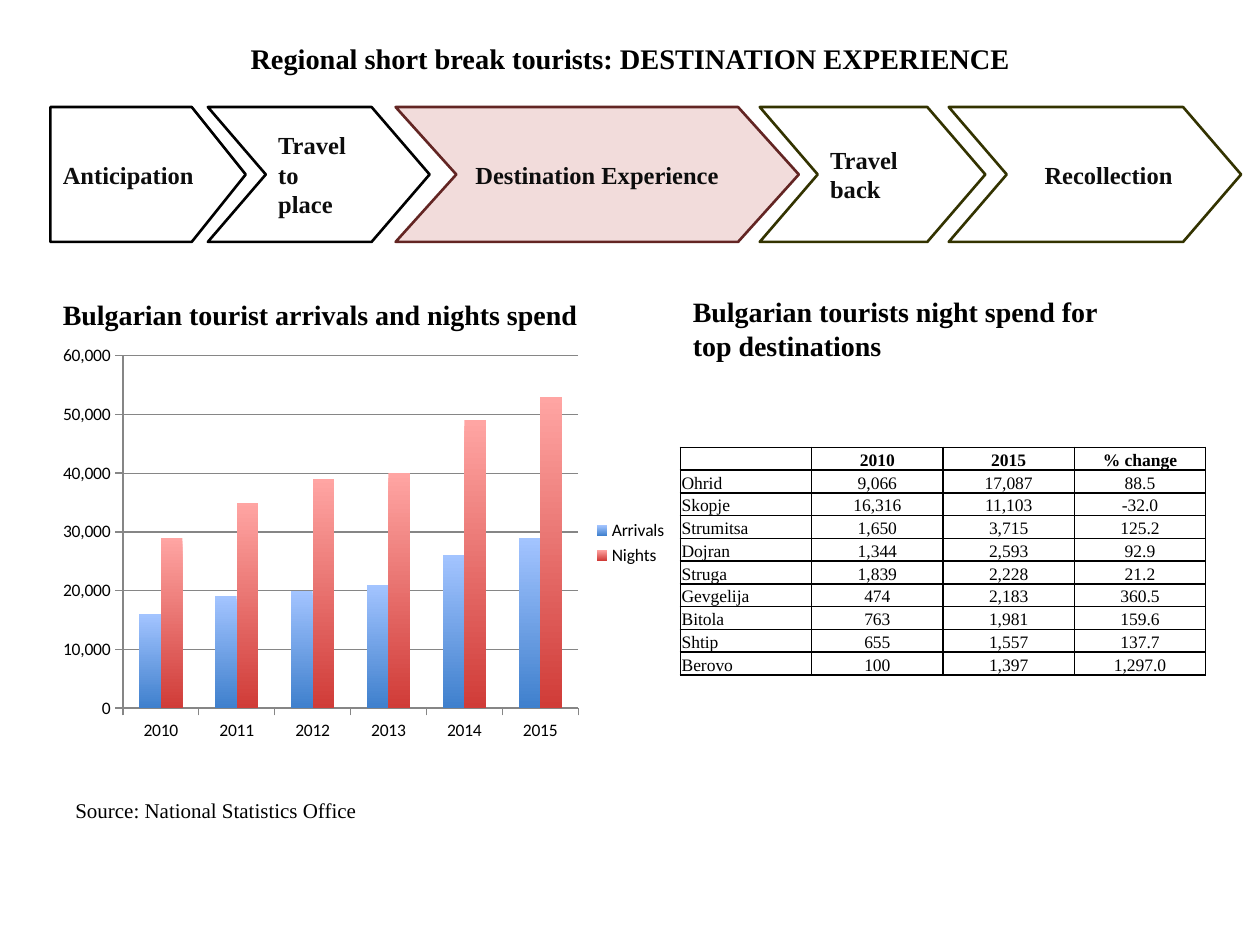
from dataclasses import dataclass

from lxml.etree import SubElement
from pptx import Presentation
from pptx.chart.data import CategoryChartData
from pptx.dml.color import RGBColor
from pptx.enum.chart import XL_CHART_TYPE, XL_LEGEND_POSITION, XL_TICK_MARK
from pptx.enum.shapes import MSO_SHAPE
from pptx.enum.text import MSO_ANCHOR, MSO_AUTO_SIZE, PP_ALIGN
from pptx.oxml.ns import qn
from pptx.util import Inches, Pt


@dataclass(frozen=True)
class Theme:
    serif: str = "Times New Roman"
    sans: str = "Calibri"
    title: float = 16.2
    heading: float = 16
    step: float = 14
    source: float = 12
    small: float = 10
    black: str = "000000"
    ink: str = "0D0D0D"
    white: str = "FFFFFF"
    olive: str = "333300"
    maroon: str = "632523"
    pink: str = "F2DCDB"
    grid: str = "868686"
    bars: tuple = (("A3C4FF", "3F80CD"), ("FFA5A3", "D03C38"))


THEME = Theme()

# left, width, point ratio, preset, text, fill, line, frame format, alignment
STEPS = [
    (0.4, 1.55, 0.4, MSO_SHAPE.PENTAGON, "Anticipation", THEME.white, THEME.black, {}, PP_ALIGN.LEFT),
    (1.65, 1.76, 0.43, MSO_SHAPE.CHEVRON, "Travel to place", THEME.white, THEME.black, {}, PP_ALIGN.LEFT),
    (3.14, 3.2, 0.45, MSO_SHAPE.CHEVRON, "Destination Experience", THEME.pink, THEME.maroon, {},
     PP_ALIGN.CENTER),
    (6.03, 1.79, 0.43, MSO_SHAPE.CHEVRON, "Travel back", THEME.white, THEME.olive, {}, PP_ALIGN.LEFT),
    (7.53, 2.32, 0.43, MSO_SHAPE.CHEVRON, "Recollection", THEME.white, THEME.olive,
     {"margin_left": Inches(0.3), "margin_right": 0}, PP_ALIGN.LEFT),
]

YEARS = ["2010", "2011", "2012", "2013", "2014", "2015"]
SERIES = {
    "Arrivals": [16000, 19000, 20000, 21000, 26000, 29000],
    "Nights": [29000, 35000, 39000, 40000, 49000, 53000],
}

NIGHTS = [
    ("", "2010", "2015", "% change"),
    ("Ohrid", "9,066", "17,087", "88.5"),
    ("Skopje", "16,316", "11,103", "-32.0"),
    ("Strumitsa", "1,650", "3,715", "125.2"),
    ("Dojran", "1,344", "2,593", "92.9"),
    ("Struga", "1,839", "2,228", "21.2"),
    ("Gevgelija", "474", "2,183", "360.5"),
    ("Bitola", "763", "1,981", "159.6"),
    ("Shtip", "655", "1,557", "137.7"),
    ("Berovo", "100", "1,397", "1,297.0"),
]


def apply(obj, **values):
    for name, value in values.items():
        setattr(obj, name, value)


def box(left, top, width, height):
    return [Inches(v) for v in (left, top, width, height)]


def add_borders(cell, color, width=1):
    tcPr = cell._tc.get_or_add_tcPr()
    for i, side in enumerate(("lnL", "lnR", "lnT", "lnB")):
        ln = SubElement(tcPr, qn(f"a:{side}"), w=str(Pt(width)))
        SubElement(SubElement(ln, qn("a:solidFill")), qn("a:srgbClr"), val=color)
        # Borders must come before the cell fill
        tcPr.insert(i, ln)


class SlideBuilder:
    def __init__(self, prs, theme):
        self.theme = theme
        self.slide = prs.slides.add_slide(prs.slide_layouts[5])
        self.shapes = self.slide.shapes

    def set_text(self, tf, text, size, color=None, bold=True, align=PP_ALIGN.LEFT, **frame):
        apply(tf, **{"word_wrap": True, **frame})
        p = tf.paragraphs[0]
        p.alignment = align
        if not text:
            p._p.get_or_add_endParaRPr().set("sz", str(int(size * 100)))
            return
        r = p.add_run()
        r.text = text
        apply(r.font, name=self.theme.serif, size=Pt(size), bold=bold)
        r.font.color.rgb = RGBColor.from_string(color or self.theme.black)

    def title(self, text, *place):
        sp = self.shapes.title
        left, top, width, height = box(*place)
        apply(sp, left=left, top=top, width=width, height=height)
        self.set_text(sp.text_frame, text, self.theme.title, align=PP_ALIGN.CENTER,
                      vertical_anchor=MSO_ANCHOR.MIDDLE, auto_size=MSO_AUTO_SIZE.NONE)

    def text(self, text, place, size, bold=True, **frame):
        sp = self.shapes.add_textbox(*box(*place))
        self.set_text(sp.text_frame, text, size, bold=bold, **frame)

    def step(self, left, width, ratio, preset, text, fill, line, frame, align):
        sp = self.shapes.add_shape(preset, *box(left, 0.85, width, 1.07))
        sp.adjustments[0] = ratio
        sp.shadow.inherit = False
        sp.fill.solid()
        sp.fill.fore_color.rgb = RGBColor.from_string(fill)
        sp.line.color.rgb = RGBColor.from_string(line)
        sp.line.width = Pt(1.5)
        self.set_text(sp.text_frame, text, self.theme.step, self.theme.ink, align=align,
                      vertical_anchor=MSO_ANCHOR.MIDDLE, **frame)

    def column_chart(self, categories, series, *place):
        data = CategoryChartData(number_format="#,##0")
        data.categories = categories
        for name, values in series.items():
            data.add_series(name, values)
        chart = self.shapes.add_chart(XL_CHART_TYPE.COLUMN_CLUSTERED, *box(*place), data).chart
        apply(chart, has_title=False, has_legend=True)
        apply(chart.font, name=self.theme.sans, size=Pt(self.theme.small))
        chart.font.color.rgb = RGBColor.from_string(self.theme.black)
        apply(chart.legend, position=XL_LEGEND_POSITION.RIGHT, include_in_layout=False)

        value_axis, grid = chart.value_axis, RGBColor.from_string(self.theme.grid)
        apply(value_axis, minimum_scale=0, maximum_scale=60000, major_unit=10000,
              has_major_gridlines=True)
        apply(value_axis.tick_labels, number_format="#,##0", number_format_is_linked=False)
        for axis in (chart.category_axis, value_axis):
            axis.major_tick_mark = XL_TICK_MARK.OUTSIDE
            axis.format.line.color.rgb = grid
        value_axis.major_gridlines.format.line.color.rgb = grid

        plot = chart.plots[0]
        apply(plot, gap_width=150, overlap=0, vary_by_categories=False)
        for ser, colors in zip(plot.series, self.theme.bars):
            fill = ser.format.fill
            fill.gradient()
            fill.gradient_angle = 270
            for stop, color in zip(fill.gradient_stops, colors):
                stop.color.rgb = RGBColor.from_string(color)

    def table(self, rows, *place):
        table = self.shapes.add_table(len(rows), len(rows[0]), *box(*place)).table
        pad = Inches(0.01)
        for i, row in enumerate(rows):
            for j, text in enumerate(row):
                cell = table.cell(i, j)
                apply(cell, margin_left=pad, margin_right=pad, margin_top=pad, margin_bottom=0,
                      vertical_anchor=MSO_ANCHOR.BOTTOM)
                cell.fill.background()
                add_borders(cell, self.theme.black)
                self.set_text(cell.text_frame, text, self.theme.small, bold=i == 0,
                              align=PP_ALIGN.CENTER if j else PP_ALIGN.LEFT)


def main():
    prs = Presentation()
    apply(prs, slide_width=Inches(10), slide_height=Inches(7.5))
    s = SlideBuilder(prs, THEME)
    s.title("Regional short break tourists: DESTINATION EXPERIENCE", 0.5, 0.3, 9, 0.33)
    for step in STEPS:
        s.step(*step)
    s.text("Bulgarian tourist arrivals and nights spend", (0.4, 1.98, 4.42, 0.7), THEME.heading,
           vertical_anchor=MSO_ANCHOR.BOTTOM)
    s.text("Source: National Statistics Office", (0.5, 6.28, 8.23, 0.3), THEME.source, bold=False)
    s.column_chart(YEARS, SERIES, 0.4, 2.68, 5, 3.26)
    s.table(NIGHTS, 5.4, 3.55, 4.17, 1.81)
    s.text("Bulgarian tourists night spend for top destinations", (5.4, 2.29, 3.82, 0.64),
           THEME.heading, margin_right=Inches(0.3))
    prs.save("out.pptx")


if __name__ == "__main__":
    main()
